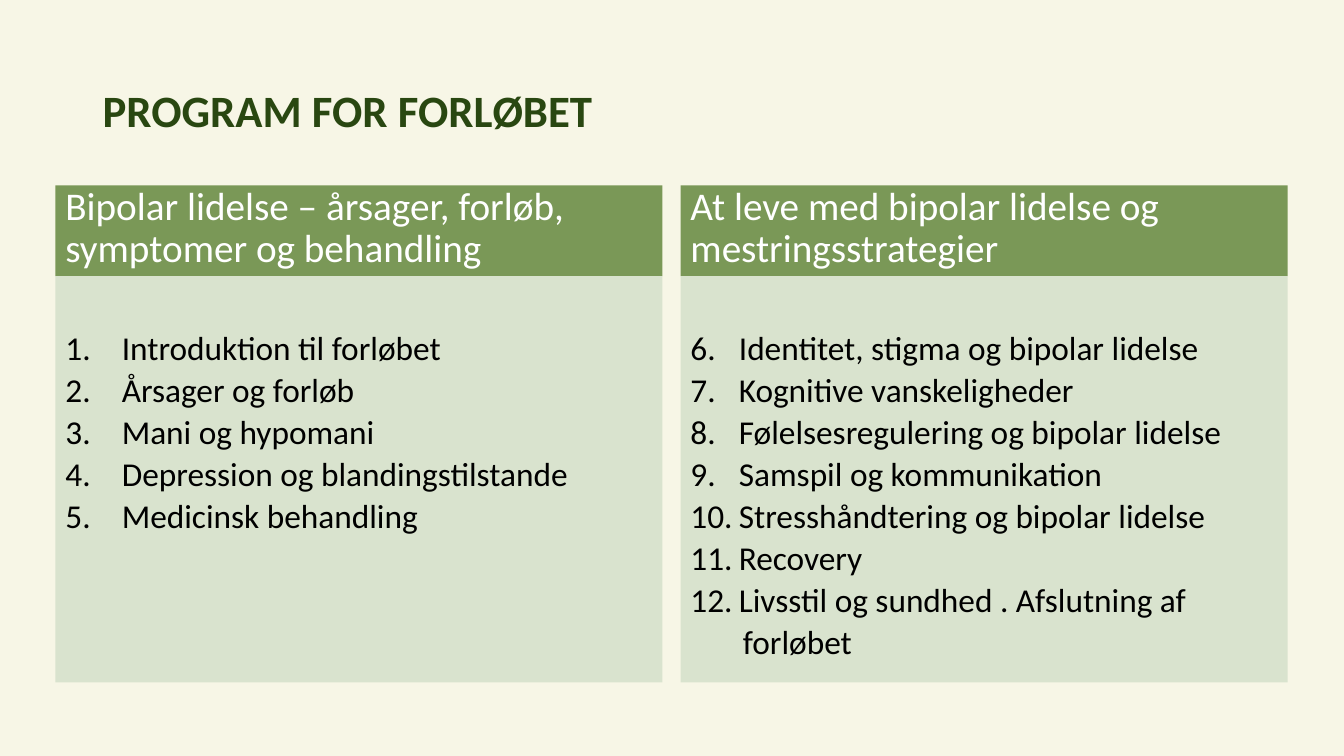
from lxml import etree
from pptx import Presentation
from pptx import util as u
from pptx.dml.color import RGBColor
from pptx.enum import shapes, text
from pptx.oxml.ns import qn

CREAM = RGBColor(0xF7, 0xF6, 0xE6)
DARK_GREEN = RGBColor(0x29, 0x47, 0x11)
GREEN = RGBColor(0x7A, 0x98, 0x57)
PALE_GREEN = RGBColor(0xD9, 0xE3, 0xCE)
WHITE = RGBColor(0xFF, 0xFF, 0xFF)
BLACK = RGBColor(0x00, 0x00, 0x00)

# Each column: left edge, heading, first number, hanging indent, sessions, last line
COLUMNS = [
    (0.55, "Bipolar lidelse – årsager, forløb, symptomer og behandling", 1, 0.56,
     ["Introduktion til forløbet", "Årsager og forløb", "Mani og hypomani",
      "Depression og blandingstilstande", "Medicinsk behandling"], None),
    (6.75, "At leve med bipolar lidelse og mestringsstrategier", 6, 0.48,
     ["Identitet, stigma og bipolar lidelse", "Kognitive vanskeligheder",
      "Følelsesregulering og bipolar lidelse", "Samspil og kommunikation",
      "Stresshåndtering og bipolar lidelse", "Recovery",
      "Livsstil og sundhed . Afslutning af"], "forløbet"),
]


def write(frame, content, size, color, bold=False, line_spacing=0.9,
          space_before=0, margin=0, start=None):
    """Add one paragraph; start is the first number of its numbered list."""
    paragraph = frame.paragraphs[0]
    if paragraph.runs:
        paragraph = frame.add_paragraph()
        paragraph.space_before = u.Pt(space_before)
    properties = paragraph._p.get_or_add_pPr()
    if margin:
        properties.set("marL", str(u.Inches(margin)))
    if start:
        properties.set("indent", str(-u.Inches(margin)))
        etree.SubElement(properties, qn("a:buFont"), typeface="+mj-lt")
        etree.SubElement(properties, qn("a:buAutoNum"),
                         type="arabicPeriod", startAt=str(start))
    paragraph.alignment = text.PP_ALIGN.LEFT
    paragraph.line_spacing = line_spacing
    run = paragraph.add_run()
    run.text = content
    font = run.font
    font.name, font.size, font.bold = "Calibri", u.Pt(size), bold
    font.color.rgb = color


class ProgramSlide:
    def __init__(self, presentation):
        self.slide = presentation.slides.add_slide(presentation.slide_layouts[6])
        self.slide.background.fill.solid()
        self.slide.background.fill.fore_color.rgb = CREAM

    def title(self, content, *box):
        shape = self.slide.shapes.add_textbox(*map(u.Inches, box))
        frame = shape.text_frame
        frame.word_wrap = True
        frame.vertical_anchor = text.MSO_ANCHOR.MIDDLE
        write(frame, content, 32, DARK_GREEN, bold=True)

    def panel(self, fill, anchor, top_inset, *box):
        shape = self.slide.shapes.add_shape(
            shapes.MSO_SHAPE.RECTANGLE, *map(u.Inches, box))
        shape.shadow.inherit = False
        shape.fill.solid()
        shape.fill.fore_color.rgb = fill
        shape.line.fill.background()
        frame = shape.text_frame
        frame.word_wrap = True
        frame.vertical_anchor = anchor
        frame.margin_top = u.Inches(top_inset)
        return frame

    def column(self, left, heading, start, indent, sessions, last_line):
        header = self.panel(GREEN, text.MSO_ANCHOR.BOTTOM, 0, left, 1.84, 6.02, 0.9)
        write(header, heading, 28, WHITE)
        body = self.panel(PALE_GREEN, text.MSO_ANCHOR.TOP, 0.61, left, 2.74, 6.02, 4.03)
        style = dict(size=23.8, color=BLACK, line_spacing=0.7, space_before=10)
        for session in sessions:
            write(body, session, margin=indent, start=start, **style)
        if last_line:
            write(body, last_line, margin=0.52, **style)


def main():
    presentation = Presentation()
    presentation.slide_width = u.Inches(13.33)
    presentation.slide_height = u.Inches(7.5)
    program = ProgramSlide(presentation)
    # Title
    program.title("PROGRAM FOR FORLØBET", 0.92, 0.4, 11.5, 1.45)
    # Two columns of numbered sessions
    for column in COLUMNS:
        program.column(*column)
    presentation.save("out.pptx")


if __name__ == "__main__":
    main()
